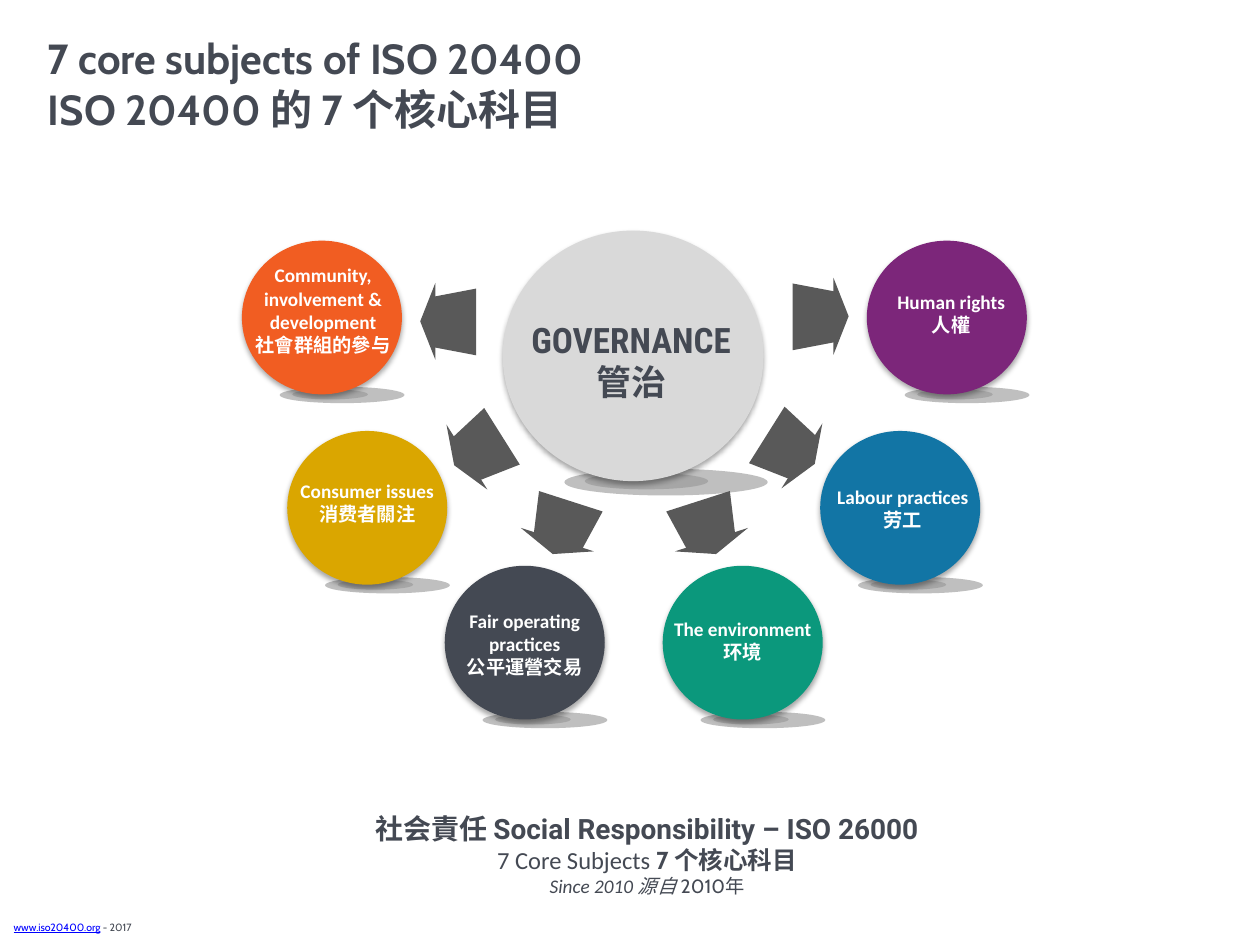
from lxml.etree import SubElement
from pptx import Presentation
from pptx.dml.color import RGBColor
from pptx.enum.shapes import MSO_SHAPE
from pptx.enum.text import MSO_ANCHOR, PP_ALIGN
from pptx.oxml.ns import qn
from pptx.util import Inches, Pt

SLATE = RGBColor(0x44, 0x49, 0x53)
WHITE = RGBColor(0xFF, 0xFF, 0xFF)
LINK = RGBColor(0x00, 0x00, 0xFF)
LIGHT = RGBColor(0xD9, 0xD9, 0xD9)
FLOOR = RGBColor(0xBF, 0xBF, 0xBF)
FLOOR_CORE = RGBColor(0xA6, 0xA6, 0xA6)
ARROW = RGBColor(0x59, 0x59, 0x59)
ORANGE = RGBColor(0xF1, 0x5D, 0x22)
GOLD = RGBColor(0xDA, 0xA6, 0x00)
GREEN = RGBColor(0x0B, 0x98, 0x7C)
BLUE = RGBColor(0x12, 0x75, 0xA5)
PURPLE = RGBColor(0x7C, 0x26, 0x7A)

# Each paragraph is a list of (text, format) runs
TITLE = [[("7 core subjects of ISO 20400", {})],
         [("ISO 20400 的 7 个核心科目", {})]]
FOOTER = [[("www.iso20400.org", {"color": LINK, "underline": True}),
           (" - 2017", {})]]
CAPTION = [
    [("社会責任 Social Responsibility – ISO 26000",
      {"font": "Roboto", "size": 16, "bold": True})],
    [("7 Core Subjects ", {"size": 14}),
     ("7 个核心科目", {"size": 14, "font": "Cabin", "bold": True})],
    [("Since 2010 源自 ", {"size": 11, "italic": True}),
     ("2010年", {"size": 11, "font": "Cabin"})],
]

# English, Chinese, colour, ball left/top, label box
SUBJECTS = [
    ("Fair operating practices", "公平運營交易", SLATE, (3.53, 4.49), (3.52, 4.78, 1.29, 0.66)),
    ("Consumer issues", "消费者關注", GOLD, (2.28, 3.42), (2.27, 3.75, 1.29, 0.47)),
    ("Community, involvement & development", "社會群組的參与", ORANGE, (1.92, 1.91),
     (1.9, 2.04, 1.33, 0.84)),
    ("The environment", "环境", GREEN, (5.26, 4.49), (5.25, 4.75, 1.29, 0.66)),
    ("Labour practices", "劳工", BLUE, (6.51, 3.42), (6.52, 3.8, 1.29, 0.47)),
    ("Human rights", "人權", PURPLE, (6.88, 1.91), (6.95, 2.25, 1.2, 0.47)),
]
BALL_W, BALL_H = 1.27, 1.22
HUB_SCALE = 1.63

# Right-hand arrows: angle, body centre, head centre, drop of the left twin
AXIS = 5.035
ARROWS = [
    (90, (6.455, 2.515), (6.675, 2.51), 0.04),
    (122.2, (6.225, 3.54), (6.415, 3.65), 0.01),
    (162.2, (5.59, 4.135), (5.665, 4.34), 0),
]


def add_text(tf, paragraphs, font="Calibri", size=11, color=SLATE, bold=False,
             align=PP_ALIGN.LEFT, anchor=MSO_ANCHOR.TOP):
    tf.word_wrap = True
    tf.vertical_anchor = anchor
    for i, runs in enumerate(paragraphs):
        p = tf.paragraphs[0] if i == 0 else tf.add_paragraph()
        p.alignment = align
        p.line_spacing = 1.0
        p.space_before = Pt(0)
        for text, fmt in runs:
            r = p.add_run()
            r.text = text
            r.font.name = fmt.get("font", font)
            r.font.size = Pt(fmt.get("size", size))
            r.font.bold = fmt.get("bold", bold)
            r.font.italic = fmt.get("italic", False)
            r.font.underline = fmt.get("underline", False)
            r.font.color.rgb = fmt.get("color", color)


def add_box(s, box, paragraphs, **fmt):
    tb = s.shapes.add_textbox(*map(Inches, box))
    add_text(tb.text_frame, paragraphs, **fmt)


def add_label(s, box, lines, **fmt):
    add_box(s, box, [[(line, {})] for line in lines], bold=True,
            align=PP_ALIGN.CENTER, anchor=MSO_ANCHOR.MIDDLE, **fmt)


def add_plain(s, kind, x, y, w, h, color):
    sp = s.shapes.add_shape(kind, *map(Inches, (x, y, w, h)))
    sp.shadow.inherit = False
    sp.fill.solid()
    sp.fill.fore_color.rgb = color
    sp.line.fill.background()
    return sp


def add_ball(s, x, y, color, scale=1.0):
    # Two flat ellipses on the floor, then the ball with a soft shadow
    for dx, dy, w, h, c in [(0.3, 1.16, 0.99, 0.13, FLOOR),
                            (0.4, 1.18, 0.6, 0.08, FLOOR_CORE)]:
        add_plain(s, MSO_SHAPE.OVAL, x + dx * scale, y + dy * scale,
                  w * scale, h * scale, c)
    sp = add_plain(s, MSO_SHAPE.OVAL, x, y, BALL_W * scale, BALL_H * scale, color)
    effects = sp._element.spPr.find(qn("a:effectLst"))
    shadow = SubElement(effects, qn("a:outerShdw"), blurRad=str(Pt(3.1)),
                        dist=str(Pt(1.8)), dir="5400000", rotWithShape="0")
    clr = SubElement(shadow, qn("a:srgbClr"), val="000000")
    SubElement(clr, qn("a:alpha"), val="35000")


def add_arrow(s, angle, body, head):
    for kind, (cx, cy), w, h in [(MSO_SHAPE.TRAPEZOID, body, 0.53, 0.33),
                                 (MSO_SHAPE.ISOSCELES_TRIANGLE, head, 0.61, 0.12)]:
        sp = add_plain(s, kind, cx - w / 2, cy - h / 2, w, h, ARROW)
        sp.rotation = angle
        if kind == MSO_SHAPE.TRAPEZOID:
            sp.adjustments[0] = 0.19


prs = Presentation()
prs.slide_width, prs.slide_height = Inches(10), Inches(7.5)
s = prs.slides.add_slide(prs.slide_layouts[5])

# Title, caption and footer
title = s.shapes.title
title.left, title.top, title.width, title.height = map(Inches, (0.28, 0.21, 6.69, 0.91))
add_text(title.text_frame, TITLE, font="Cabin", size=24, bold=True)
add_box(s, (0.01, 7.26, 6.47, 0.2), FOOTER, font="Cabin", size=6)
add_box(s, (1.79, 6.39, 6.69, 0.79), CAPTION, align=PP_ALIGN.CENTER)

# Hub and subject balls
add_ball(s, 3.99, 1.83, LIGHT, HUB_SCALE)
for _, _, color, (x, y), _ in SUBJECTS:
    add_ball(s, x, y, color)

# Arrows, mirrored about the hub axis
for angle, body, head, drop in ARROWS:
    add_arrow(s, angle, body, head)
    twin = [(2 * AXIS - cx, cy + drop) for cx, cy in (body, head)]
    add_arrow(s, 360 - angle, *twin)

# Labels
add_label(s, (3.93, 2.48, 2.16, 0.77), ["GOVERNANCE", "管治"],
          font="Roboto Condensed", size=20)
for english, chinese, _, _, box in SUBJECTS:
    add_label(s, box, [english, chinese], color=WHITE)

prs.save("out.pptx")
